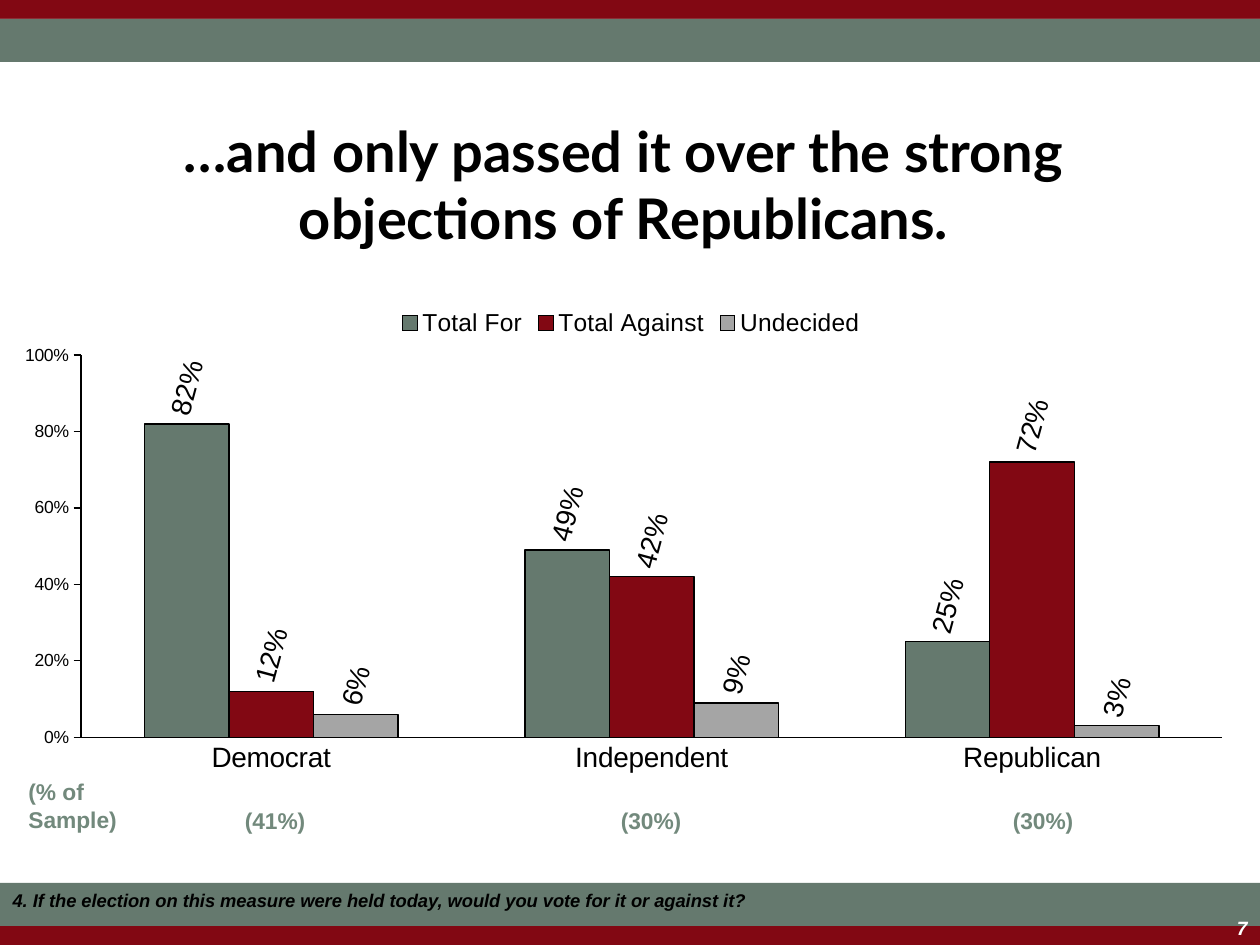
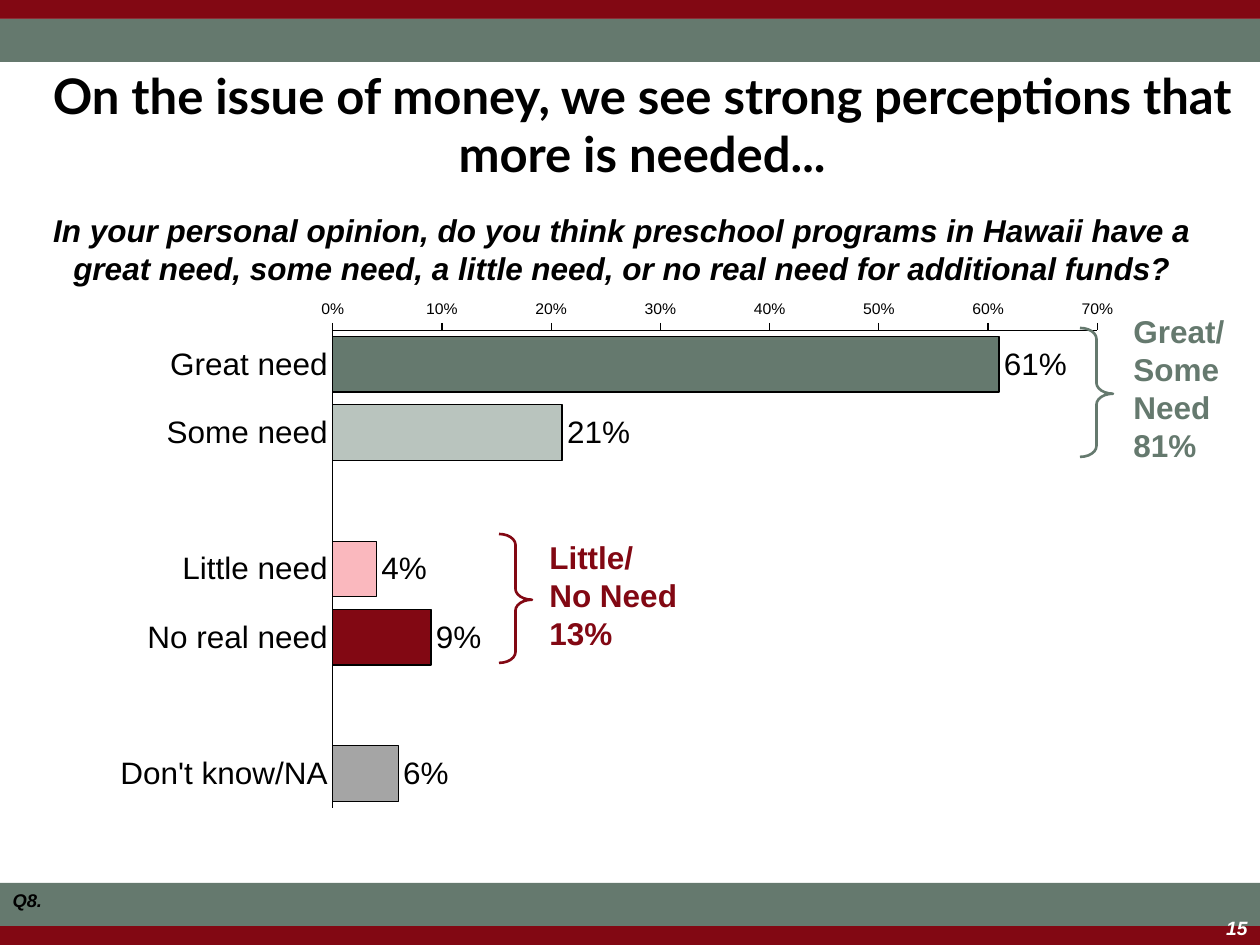
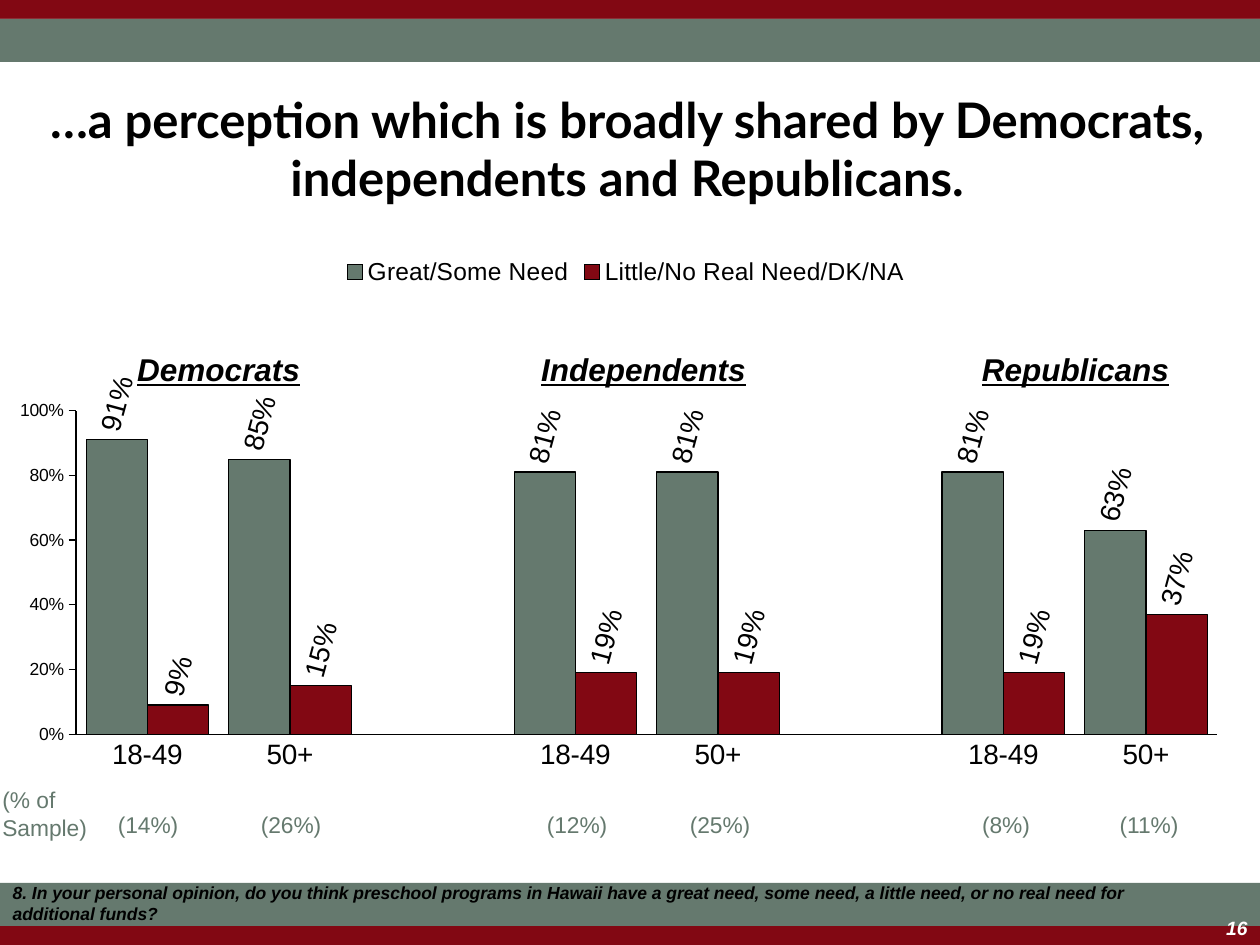
import pptx
import pptx.chart.data
import pptx.dml.color
import pptx.enum.chart
import pptx.enum.shapes
import pptx.enum.text
import pptx.oxml
import pptx.oxml.ns
import pptx.util

PX = 914400 / 126
COLORS = {
    "red": "820813", "green": "65796E", "sage": "72897C", "pale green": "B9C4BE",
    "pink": "FAB8BE", "gray": "A5A5A5", "black": "000000", "white": "FFFFFF",
}
BODY_FONT, TITLE_FONT = "Arial", "Lato"
ALIGN = pptx.enum.text.PP_ALIGN
ANCHOR = pptx.enum.text.MSO_ANCHOR
CHART = pptx.enum.chart
SHAPE = pptx.enum.shapes.MSO_SHAPE


def emu(*lengths):
    return [round(length * PX) for length in lengths]


def rgb(name):
    return pptx.dml.color.RGBColor.from_string(COLORS[name])


def style_font(font, size, color="black", name=BODY_FONT, bold=False, italic=False, underline=False):
    font.size, font.name = pptx.util.Pt(size), name
    font.bold, font.italic, font.underline = bold, italic, underline
    font.color.rgb = rgb(color)


def write(shape, lines, size, align=ALIGN.LEFT, anchor=ANCHOR.TOP, **look):
    """Fill a text shape with one paragraph for each line."""
    frame = shape.text_frame
    frame.word_wrap = True
    frame.auto_size = pptx.enum.text.MSO_AUTO_SIZE.NONE
    frame.vertical_anchor = anchor
    for index, line in enumerate(lines):
        para = frame.add_paragraph() if index else frame.paragraphs[0]
        para.alignment = align
        para.space_before = pptx.util.Pt(0)
        span = para.add_run()
        span.text = line
        style_font(span.font, size, **look)


def add_text(page, box, lines, size, **look):
    write(page.shapes.add_textbox(*emu(*box)), lines, size, **look)


def place(shape, box):
    shape.left, shape.top, shape.width, shape.height = emu(*box)


def dress_master(deck, page):
    """Give the master its red ground, white panel and green bands."""
    master = deck.slide_master
    master.background.fill.solid()
    master.background.fill.fore_color.rgb = rgb("red")
    bands = [("white", 19, 907), ("green", 19, 43), ("green", 883, 43)]
    for order, (color, top, height) in enumerate(bands):
        band = page.shapes.add_shape(SHAPE.RECTANGLE, *emu(0, top, 1260, height))
        band.shadow.inherit = False
        band.fill.solid()
        band.fill.fore_color.rgb = rgb(color)
        band.line.fill.background()
        master.shapes.element.insert(2 + order, band.element)


def frame_page(page, title, title_box, title_size, question, question_top, question_size, number):
    """Set the title, the survey question in the footer and the page number."""
    place(page.shapes.title, title_box)
    write(page.shapes.title, [title], title_size, align=ALIGN.CENTER,
          anchor=ANCHOR.MIDDLE, name=TITLE_FONT, bold=True)
    footer = page.placeholders[1]
    place(footer, (0, question_top, 1220, 44))
    props = footer.text_frame.paragraphs[0]._p.get_or_add_pPr()
    props.set("marL", "0")
    props.set("indent", "0")
    props.append(pptx.oxml.parse_xml("<a:buNone %s/>" % pptx.oxml.ns.nsdecls("a")))
    write(footer, [question], question_size, bold=True, italic=True)
    add_text(page, (1100, 910, 160, 35), [number], 11, align=ALIGN.RIGHT,
             color="white", bold=True, italic=True)


def fix_plot_area(chart, fractions):
    """Pin the inner plot area to fractions of the chart box."""
    area = chart.element.xpath("c:chart/c:plotArea")[0]
    for old in area.xpath("c:layout"):
        area.remove(old)
    sizes = "".join('<c:%s val="%s"/>' % pair for pair in zip("xywh", fractions))
    area.insert(0, pptx.oxml.parse_xml(
        '<c:layout %s><c:manualLayout><c:layoutTarget val="inner"/>'
        '<c:xMode val="edge"/><c:yMode val="edge"/>%s</c:manualLayout></c:layout>'
        % (pptx.oxml.ns.nsdecls("c"), sizes)))


def style_axis(axis, size, tick):
    axis.has_major_gridlines = False
    axis.major_tick_mark = tick
    axis.minor_tick_mark = CHART.XL_TICK_MARK.NONE
    axis.format.line.color.rgb = rgb("black")
    axis.format.line.width = pptx.util.Pt(0.75)
    style_font(axis.tick_labels.font, size)


def paint_bar(bar, color):
    bar.format.fill.solid()
    bar.format.fill.fore_color.rgb = rgb(color)
    bar.format.line.color.rgb = rgb("black")
    bar.format.line.width = pptx.util.Pt(0.75)


def add_bars(page, kind, box, plot_box, categories, series, gap, top, step, text_size, value_size):
    """Draw a percent chart; series holds (name, values, color)."""
    data = pptx.chart.data.CategoryChartData(number_format="0%")
    data.categories = categories
    for name, values, _ in series:
        data.add_series(name, values)
    chart = page.shapes.add_chart(kind, *emu(*box), data).chart
    chart.has_title = chart.has_legend = False
    style_font(chart.font, 18)
    fix_plot_area(chart, plot_box)
    style_axis(chart.category_axis, text_size, CHART.XL_TICK_MARK.NONE)
    scale = chart.value_axis
    style_axis(scale, value_size, CHART.XL_TICK_MARK.OUTSIDE)
    scale.minimum_scale, scale.maximum_scale, scale.major_unit = 0, top, step
    scale.tick_labels.number_format = "0%"
    scale.tick_labels.number_format_is_linked = False
    plot = chart.plots[0]
    plot.gap_width, plot.overlap, plot.vary_by_categories = gap, 0, False
    for bars, (_, _, color) in zip(plot.series, series):
        bars.invert_if_negative = False
        paint_bar(bars, color)
        labels = bars.data_labels
        labels.show_value = True
        labels.number_format, labels.number_format_is_linked = "0%", False
        labels.position = CHART.XL_LABEL_POSITION.OUTSIDE_END
        style_font(labels.font, text_size)
    return chart


def add_columns(page, box, plot_box, categories, series, gap):
    """Draw grouped columns with a legend on top and tilted labels."""
    chart = add_bars(page, CHART.XL_CHART_TYPE.COLUMN_CLUSTERED, box, plot_box,
                     categories, series, gap, 1, 0.2, 16, 10)
    chart.has_legend = True
    chart.legend.position = CHART.XL_LEGEND_POSITION.TOP
    chart.legend.include_in_layout = False
    style_font(chart.legend.font, 14)
    for body in chart.element.xpath(".//c:dLbls/c:txPr/a:bodyPr"):
        body.set("rot", "-4500000")
        body.set("vert", "horz")


def add_sample_row(page, left, top, shares, share_top, **look):
    """Write the sample caption and a share at each (left, text)."""
    add_text(page, (left, top, 132, 68), ["(% of Sample)"], 13, **look)
    for share_left, share in shares:
        add_text(page, (share_left, share_top, 132, 40), [share], 13, align=ALIGN.CENTER, **look)


def add_total(page, box, lines, text_left, text_top, color):
    """Draw a brace and, beside it, the total it stands for."""
    brace = page.shapes.add_shape(SHAPE.RIGHT_BRACE, *emu(*box))
    brace.shadow.inherit = False
    brace.adjustments[0], brace.adjustments[1] = 0.33, 0.51
    brace.fill.background()
    brace.line.color.rgb = rgb(color)
    brace.line.width = pptx.util.Pt(1.5)
    text_box = (box[0] + text_left, box[1] + text_top, 178, 38 * len(lines) + 13)
    add_text(page, text_box, lines, 18, color=color, bold=True)


def build_vote_by_party(page):
    frame_page(page, "…and only passed it over the strong objections of Republicans.",
               (45, 105, 1158, 158), 32,
               "4. If the election on this measure were held today, would you vote for it or against it?",
               883, 10.5, "7")
    add_columns(page, (20, 295, 1222, 501), (0.05, 0.12, 0.934, 0.763),
                ["Democrat", "Independent", "Republican"],
                [("Total For", [0.82, 0.49, 0.25], "green"),
                 ("Total Against", [0.12, 0.42, 0.72], "red"),
                 ("Undecided", [0.06, 0.09, 0.03], "gray")], 150)
    add_sample_row(page, 16, 772, [(209, "(41%)"), (585, "(30%)"), (977, "(30%)")], 801,
                   color="sage", bold=True)


def build_need_for_funds(page):
    frame_page(page, "On the issue of money, we see strong perceptions that more is needed...",
               (24, 59, 1236, 130), 28, "Q8.", 883, 10.5, "15")
    add_text(page, (24, 205, 1196, 90),
             ["In your personal opinion, do you think preschool programs in Hawaii have a "
              "great need, some need, a little need, or no real need for additional funds?"],
             18, align=ALIGN.CENTER, bold=True, italic=True)
    answers = [("Great need", 0.61, "green"), ("Some need", 0.21, "pale green"),
               ("", None, None), ("Little need", 0.04, "pink"),
               ("No real need", 0.09, "red"), ("", None, None),
               ("Don't know/NA", 0.06, "gray")]
    names, values, colors = zip(*answers)
    chart = add_bars(page, CHART.XL_CHART_TYPE.BAR_CLUSTERED, (81, 300, 1062, 547),
                     (0.237, 0.038, 0.72, 0.889), names, [("Series 1", values, "green")],
                     23, 0.7, 0.1, 18, 9)
    chart.category_axis.reverse_order = True
    chart.category_axis.crosses = CHART.XL_AXIS_CROSSES.MAXIMUM
    for index, color in enumerate(colors):
        if color:
            paint_bar(chart.plots[0].series[0].points[index], color)
    add_total(page, (1080, 328, 33, 129), ["Great/", "Some", "Need", "81%"], 41, -22, "green")
    add_total(page, (499, 534, 33, 129), ["Little/", "No Need", "13%"], 38, -2, "red")


def build_need_by_party(page):
    frame_page(page, "…a perception which is broadly shared by Democrats, independents and Republicans.",
               (35, 83, 1184, 130), 28,
               "8. In your personal opinion, do you think preschool programs in Hawaii have a "
               "great need, some need, a little need, or no real need for additional funds?",
               876, 10, "16")
    ages = ["18-49", "50+"]
    add_columns(page, (15, 244, 1222, 581), (0.05, 0.287, 0.934, 0.557),
                ages + [""] + ages + [""] + ages,
                [("Great/Some Need", [0.91, 0.85, None, 0.81, 0.81, None, 0.81, 0.63], "green"),
                 ("Little/No Real Need/DK/NA",
                  [0.09, 0.15, None, 0.19, 0.19, None, 0.19, 0.37], "red")], 33)
    shares = ["(14%)", "(26%)", None, "(12%)", "(25%)", None, "(8%)", "(11%)"]
    add_sample_row(page, -10, 780,
                   [(82 + 143 * slot, share) for slot, share in enumerate(shares) if share],
                   805, color="green")
    for left, party in [(102, "Democrats"), (527, "Independents"), (959, "Republicans")]:
        add_text(page, (left, 344, 233, 50), [party], 18, align=ALIGN.CENTER,
                 bold=True, italic=True, underline=True)


def main():
    deck = pptx.Presentation()
    deck.slide_width, deck.slide_height = emu(1260, 945)
    for build in (build_vote_by_party, build_need_for_funds, build_need_by_party):
        page = deck.slides.add_slide(deck.slide_layouts[1])
        if len(deck.slides) == 1:
            dress_master(deck, page)
        build(page)
    deck.save("out.pptx")


if __name__ == "__main__":
    main()
